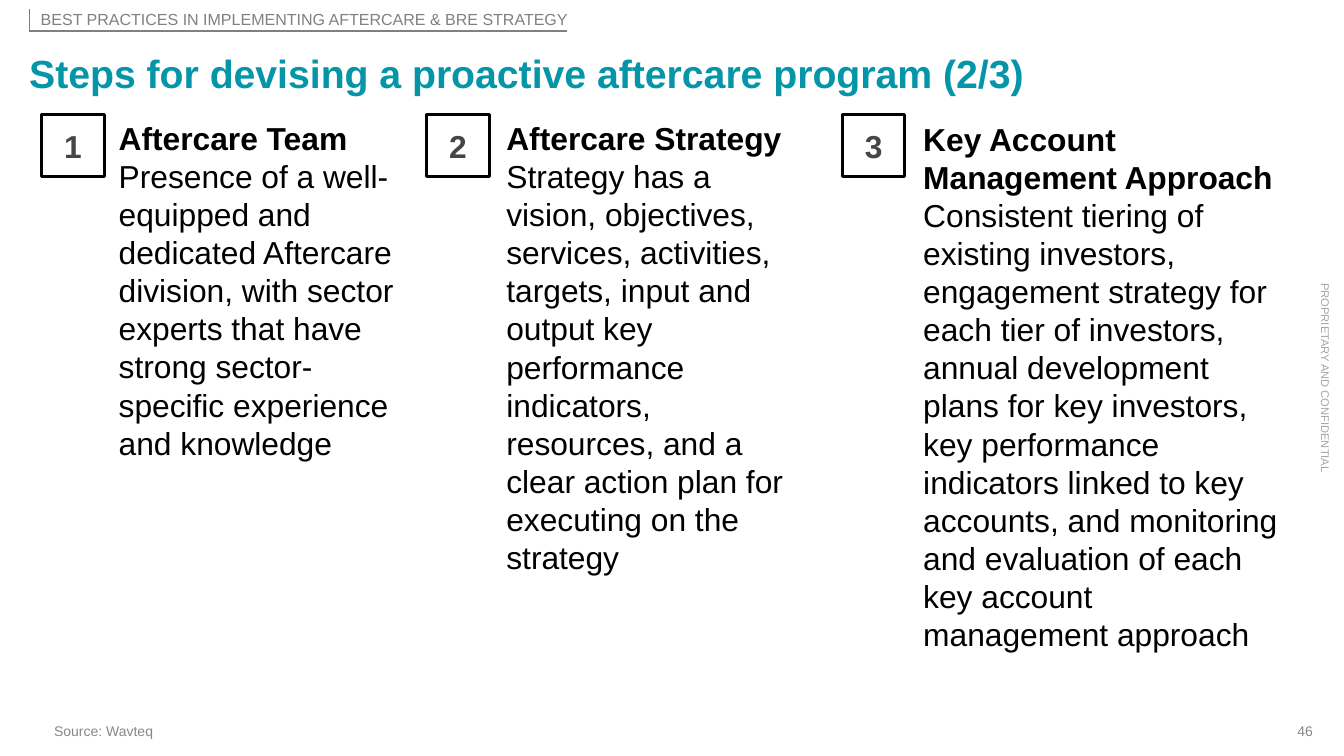
"""Build the slide on steps for a proactive aftercare program."""
from dataclasses import dataclass

from pptx import Presentation
from pptx.dml.color import RGBColor as Color
from pptx.enum.shapes import MSO_CONNECTOR as Link, MSO_SHAPE as Shape
from pptx.enum.text import MSO_ANCHOR as Anchor, MSO_AUTO_SIZE as Fit, PP_ALIGN as Align
from pptx.oxml.ns import qn
from pptx.util import Pt


@dataclass(frozen=True)
class Theme:
    """Hold the font, colours and type sizes."""
    font: str = "Arial"
    teal: str = "0495A8"
    black: str = "000000"
    dark: str = "464646"
    rule: str = "808080"
    gray: str = "878787"
    pale: str = "A5A5A5"
    head: float = 30.9
    body: float = 25
    tag: float = 12.6
    note: float = 11
    side: float = 8.8


THEME = Theme()
STEPS = [
    (33, (86.4, 90, 242, 280), "Aftercare Team",
     "Presence of a well-equipped and dedicated Aftercare division, with sector "
     "experts that have strong sector-specific experience and knowledge"),
    (336.2, (391.7, 90, 242, 370.8), "Aftercare Strategy",
     "Strategy has a vision, objectives, services, activities, targets, input and "
     "output key performance indicators, resources, and a clear action plan for "
     "executing on the strategy"),
    (663.6, (720, 90.7, 295.2, 431.3), "Key Account Management Approach",
     "Consistent tiering of existing investors, engagement strategy for each tier "
     "of investors, annual development plans for key investors, key performance "
     "indicators linked to key accounts, and monitoring and evaluation of each key "
     "account management approach"),
]


def place(shape, box):
    """Move and size a shape."""
    shape.left, shape.top, shape.width, shape.height = map(Pt, box)


def set_frame(frame, inset=(0, 0, 0, 0), anchor=Anchor.TOP):
    """Set wrapping, margins and anchor of a text frame."""
    frame.word_wrap = True
    frame.auto_size = Fit.NONE
    frame.vertical_anchor = anchor
    (frame.margin_left, frame.margin_top,
     frame.margin_right, frame.margin_bottom) = map(Pt, inset)


def add_run(para, text, size, color, bold=False):
    """Add one styled run."""
    run = para.add_run()
    run.text = text
    font = run.font
    font.name, font.size, font.bold = THEME.font, Pt(size), bold
    font.color.rgb = Color.from_string(color)


def add_label(slide, box, text, size, color, align=Align.LEFT, anchor=Anchor.TOP):
    """Add a small one-line text box."""
    label = slide.shapes.add_textbox(*map(Pt, box))
    set_frame(label.text_frame, anchor=anchor)
    para = label.text_frame.paragraphs[0]
    para.alignment = align
    add_run(para, text, size, color)
    return label


def add_line(group, ends, width):
    """Add a plain gray line."""
    line = group.shapes.add_connector(Link.STRAIGHT, *map(Pt, ends))
    line.line.color.rgb = Color.from_string(THEME.rule)
    line.line.width = Pt(width)
    props = line._element.spPr
    props.append(props.makeelement(qn("a:effectLst"), {}))


def add_title(slide, text):
    """Fill and format the title placeholder."""
    title = slide.shapes.title
    place(title, (23, 38.9, 1021.7, 37.4))
    set_frame(title.text_frame)
    para = title.text_frame.paragraphs[0]
    para.alignment = Align.LEFT
    add_run(para, text, THEME.head, THEME.teal, True)


def add_tag(slide, text):
    """Add the section tag grouped with its two rules."""
    left, top, right, base = 23, 7.2, 446.8, 24.5
    group = slide.shapes.add_group_shape()
    tag = group.shapes.add_shape(
        Shape.LEFT_RIGHT_ARROW, *map(Pt, (left, top, right - left, base - top)))
    tag.adjustments[0], tag.adjustments[1] = 1, 0
    tag.shadow.inherit = False
    tag.fill.background()
    tag.line.fill.background()
    set_frame(tag.text_frame, (2.9, 0, 0, 2.2))
    para = tag.text_frame.paragraphs[0]
    para.alignment = Align.RIGHT
    add_run(para, text, THEME.tag, THEME.rule)
    add_line(group, (right, base, left, base), 1.5)
    add_line(group, (left, top, left, base), 0.75)


def add_badge(slide, left, num):
    """Add a numbered square."""
    badge = slide.shapes.add_shape(Shape.RECTANGLE, *map(Pt, (left, 90, 49, 49)))
    badge.shadow.inherit = False
    badge.fill.background()
    badge.line.color.rgb = Color.from_string(THEME.black)
    badge.line.width = Pt(2.25)
    set_frame(badge.text_frame, (7.2, 3.6, 7.2, 3.6), Anchor.MIDDLE)
    para = badge.text_frame.paragraphs[0]
    para.alignment = Align.CENTER
    add_run(para, str(num), THEME.body, THEME.dark, True)


def add_step(slide, num, step):
    """Add one step: badge, bold heading and body."""
    left, area, head, body = step
    add_badge(slide, left, num)
    box = slide.shapes.add_textbox(*map(Pt, area))
    frame = box.text_frame
    set_frame(frame, (7.2, 3.6, 7.2, 3.6))
    paras = frame.paragraphs[0], frame.add_paragraph()
    for para, text, bold in zip(paras, (head, body), (True, False)):
        add_run(para, text, THEME.body, THEME.black, bold)


def add_source(slide, text):
    """Add the source line with its hanging indent."""
    label = add_label(slide, (23, 568.8, 853.9, 13.7), text,
                      THEME.note, THEME.gray, anchor=Anchor.BOTTOM)
    props = label.text_frame.paragraphs[0]._p.get_or_add_pPr()
    props.set("marL", str(Pt(39.6)))
    props.set("indent", str(-Pt(20)))


def main():
    """Build and save the slide."""
    deck = Presentation()
    deck.slide_width, deck.slide_height = Pt(1058.4), Pt(595.4)
    slide = deck.slides.add_slide(deck.slide_layouts[5])
    add_label(slide, (1012.3, 569, 21.6, 13.7), "46",
              THEME.note, THEME.gray, Align.RIGHT)
    side = add_label(slide, (967, 292.3, 153.4, 10.8), "PROPRIETARY AND CONFIDENTIAL",
                     THEME.side, THEME.pale, Align.CENTER)
    side.rotation = 90
    add_title(slide, "Steps for devising a proactive aftercare program (2/3)")
    add_source(slide, "Source: Wavteq")
    add_tag(slide, "BEST PRACTICES IN IMPLEMENTING AFTERCARE & BRE STRATEGY")
    for num, step in enumerate(STEPS, 1):
        add_step(slide, num, step)
    deck.save("out.pptx")


if __name__ == "__main__":
    main()
